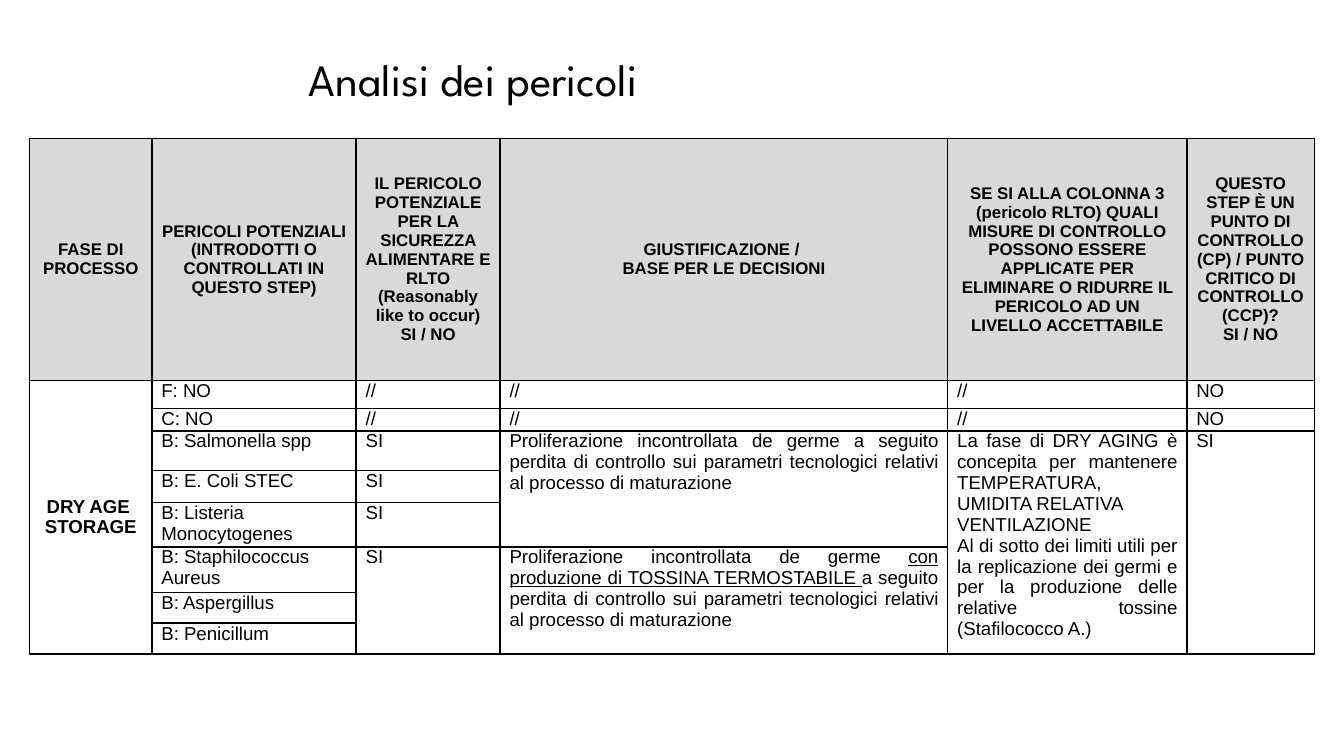
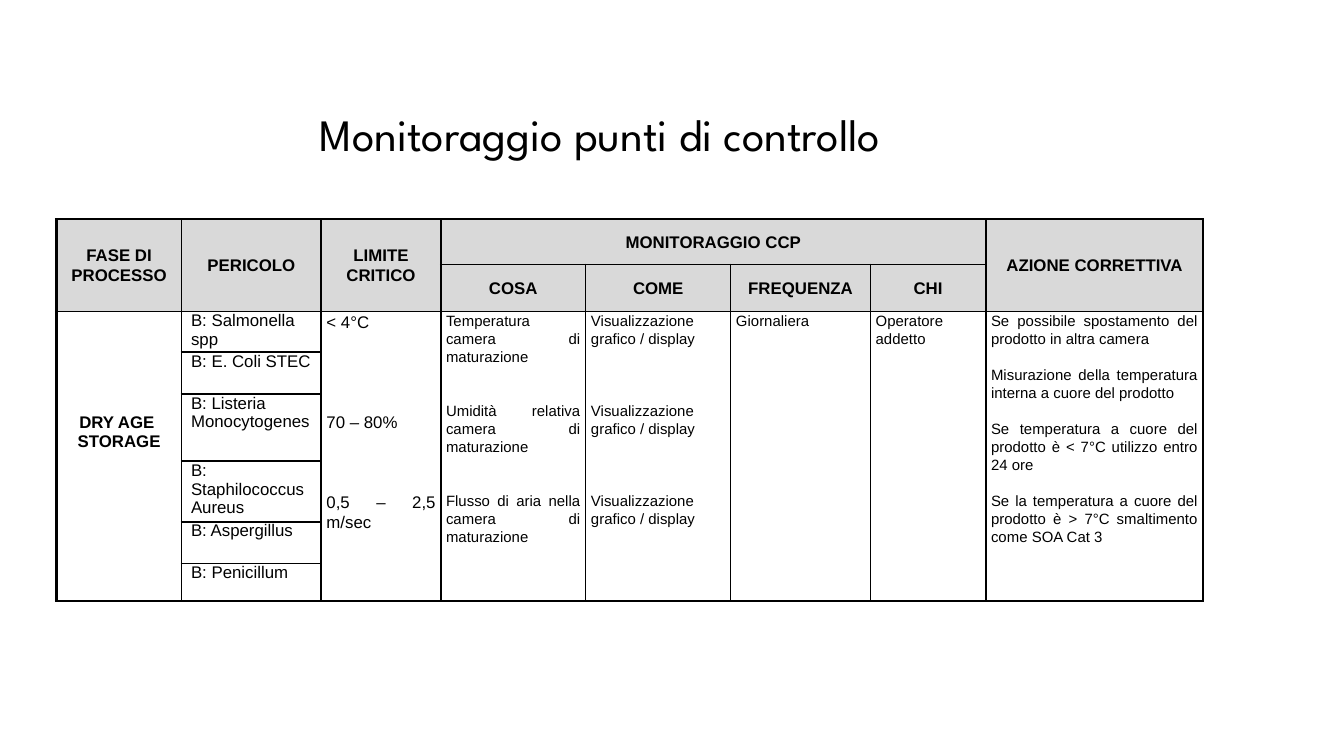
import pptx
import pptx.util
import pptx.dml.color
import pptx.enum.text
from lxml import etree
from pptx.util import Cm, Pt

COLOURS = {"ink": "000000", "header": "D9D9D9"}
BODY_FONT = "Arial"
TITLE_FONT = "League Spartan"
ALIGN = pptx.enum.text.PP_ALIGN
MIDDLE = pptx.enum.text.MSO_ANCHOR.MIDDLE
TOP = pptx.enum.text.MSO_ANCHOR.TOP
DRAWING = "http://schemas.openxmlformats.org/drawingml/2006/main"

HAZARDS = [
    "B: Salmonella spp",
    "B: E. Coli STEC",
    "B: Listeria Monocytogenes",
    "B: Staphilococcus Aureus",
    "B: Aspergillus",
    "B: Penicillum",
]
STAGE = ["DRY AGE ", "STORAGE"]


def colour(name):
    return pptx.dml.color.RGBColor.from_string(COLOURS[name])


class SlideWriter:
    def __init__(self, deck):
        self.deck = deck
        self.page = None
        self.grid = None

    def add_page(self):
        self.page = self.deck.slides.add_slide(self.deck.slide_layouts[6])

    def style(self, para, size, font=BODY_FONT, bold=False):
        para.font.name = font
        para.font.size = Pt(size)
        para.font.bold = bold
        para.font.color.rgb = colour("ink")

    def title(self, text, left, top):
        box = self.page.shapes.add_textbox(Cm(left), Cm(top), Cm(11.66), Cm(2))
        frame = box.text_frame
        frame.word_wrap = True
        frame.vertical_anchor = MIDDLE
        for side in ("left", "top", "right", "bottom"):
            setattr(frame, f"margin_{side}", Cm(0.25))
        frame.text = text
        self.style(frame.paragraphs[0], 24, TITLE_FONT)

    def table(self, left, top, widths, heights, left_edge=1):
        shape = self.page.shapes.add_table(
            len(heights), len(widths), Cm(left), Cm(top),
            Cm(sum(widths)), Cm(sum(heights)))
        self.grid = shape.table
        self.grid.first_row = False
        self.grid.horz_banding = False
        for column, width in zip(self.grid.columns, widths):
            column.width = Cm(width)
        for row, height in zip(self.grid.rows, heights):
            row.height = Cm(height)
            for index, cell in enumerate(row.cells):
                self.borders(cell, left_edge if index == 0 else 1)
                cell.fill.background()
                self.style(cell.text_frame.paragraphs[0], 8)

    def borders(self, cell, left_edge):
        properties = cell._tc.get_or_add_tcPr()
        for side, width in (("L", left_edge), ("R", 1), ("T", 1), ("B", 1)):
            line = etree.SubElement(
                properties, f"{{{DRAWING}}}ln{side}", w=str(int(Pt(width))))
            fill = etree.SubElement(line, f"{{{DRAWING}}}solidFill")
            etree.SubElement(fill, f"{{{DRAWING}}}srgbClr", val=COLOURS["ink"])

    def cell(self, row, column, paras, size, align=ALIGN.JUSTIFY, bold=False,
             anchor=TOP, rows=1, columns=1, inset=0.18, pad_top=0,
             gaps=(), spacing=None):
        cell = self.grid.cell(row, column)
        if rows * columns > 1:
            cell.merge(self.grid.cell(row + rows - 1, column + columns - 1))
        cell.margin_left = cell.margin_right = Cm(inset)
        cell.margin_top, cell.margin_bottom = Cm(pad_top), Cm(0)
        cell.vertical_anchor = anchor
        frame = cell.text_frame
        for index, content in enumerate(paras):
            para = frame.add_paragraph() if index else frame.paragraphs[0]
            self.style(para, size, bold=bold)
            para.alignment = align
            if spacing:
                para.line_spacing = spacing
            if index and gaps:
                para.space_before = Pt(gaps[index - 1])
            spans = [content] if isinstance(content, str) else content
            for position, text in enumerate(spans):
                span = para.add_run()
                span.text = text
                if position % 2:
                    span.font.underline = True
        return cell

    def header(self, row, column, paras, **options):
        cell = self.cell(row, column, paras, 9, ALIGN.CENTER, True, MIDDLE, **options)
        cell.fill.solid()
        cell.fill.fore_color.rgb = colour("header")


def hazard_analysis(writer):
    writer.add_page()
    writer.table(0.56, 2.62, [2.31, 3.86, 2.72, 8.46, 4.52, 2.41],
                 [4.57, 0.53, 0.43, 0.74, 0.61, 0.84, 0.86, 0.58, 0.58])
    headers = [
        ["FASE DI PROCESSO"],
        ["PERICOLI POTENZIALI (INTRODOTTI O CONTROLLATI IN QUESTO STEP)"],
        ["IL PERICOLO POTENZIALE PER LA SICUREZZA ALIMENTARE E RLTO "
         "(Reasonably like to occur) SI / NO"],
        ["GIUSTIFICAZIONE / ", "BASE PER LE DECISIONI"],
        ["SE SI ALLA COLONNA 3 (pericolo RLTO) QUALI MISURE DI CONTROLLO POSSONO "
         "ESSERE APPLICATE PER ELIMINARE O RIDURRE IL PERICOLO AD UN LIVELLO ACCETTABILE"],
        ["QUESTO STEP È UN PUNTO DI CONTROLLO (CP) / PUNTO CRITICO DI CONTROLLO (CCP)?",
         "SI / NO"],
    ]
    for column, paras in enumerate(headers):
        writer.header(0, column, paras)
    writer.cell(1, 0, STAGE, 10, ALIGN.CENTER, True, MIDDLE, rows=8)
    for row, hazard in enumerate(["F: NO", "C: NO"] + HAZARDS, start=1):
        writer.cell(row, 1, [hazard], 10, ALIGN.LEFT)
    for row in (1, 2):
        for column, text in enumerate(["//", "//", "//", "NO"], start=2):
            writer.cell(row, column, [text], 10)
    for row, rows in ((3, 1), (4, 1), (5, 1), (6, 3)):
        writer.cell(row, 2, ["SI"], 10, rows=rows)
    growth = "Proliferazione incontrollata de germe "
    cause = ("a seguito perdita di controllo sui parametri tecnologici relativi "
             "al processo di maturazione ")
    writer.cell(3, 3, [growth + cause], 10, rows=3)
    writer.cell(6, 3, [[growth, "con produzione di TOSSINA TERMOSTABILE ", cause]],
                10, rows=3)
    writer.cell(3, 4, [
        "La fase di DRY AGING è concepita per mantenere TEMPERATURA, UMIDITA RELATIVA",
        "VENTILAZIONE ",
        "Al di sotto dei limiti utili per la replicazione dei germi e per la "
        "produzione delle relative tossine (Stafilococco A.)",
    ], 10, rows=6)
    writer.cell(3, 5, ["SI"], 10, rows=6)
    writer.title("Analisi dei pericoli", 5.59, 0.48)


def control_monitoring(writer):
    writer.add_page()
    writer.table(1.07, 4.14, [2.36, 2.64, 2.26, 2.74, 2.74, 2.64, 2.18, 4.11],
                 [0.86, 0.89, 0.66, 0.79, 1.27, 0.99, 0.79, 0.71], left_edge=2.25)
    tight = {"inset": 0.1, "spacing": 1.07}
    tall_headers = {0: "FASE DI PROCESSO", 1: "PERICOLO", 2: "LIMITE CRITICO",
                    7: "AZIONE CORRETTIVA"}
    for column, text in tall_headers.items():
        writer.header(0, column, [text], rows=2, **tight)
    writer.header(0, 3, ["MONITORAGGIO CCP"], columns=4, **tight)
    for column, text in enumerate(["COSA", "COME", "FREQUENZA", "CHI"], start=3):
        writer.header(1, column, [text], **tight)
    writer.cell(2, 0, STAGE, 9, ALIGN.CENTER, True, rows=6, inset=0.1, pad_top=1.92)
    for row, hazard in enumerate(HAZARDS, start=2):
        writer.cell(row, 1, [hazard], 9, ALIGN.LEFT)
    writer.cell(2, 2, ["< 4°C", "70 – 80%", "0,5 – 2,5 m/sec"], 9, rows=6,
                gaps=[43, 32], **tight)
    line = 9.65
    columns = [
        (["Temperatura camera di maturazione",
          "Umidità relativa camera di maturazione",
          "Flusso di aria nella camera di maturazione"], 2),
        (["Visualizzazione grafico / display"] * 3, 3),
        (["Giornaliera"], 0),
        (["Operatore addetto"], 0),
        (["Se possibile spostamento del prodotto in altra camera",
          "Misurazione della temperatura interna a cuore del prodotto",
          "Se temperatura a cuore del prodotto è < 7°C utilizzo entro 24 ore",
          "Se la temperatura a cuore del prodotto è > 7°C smaltimento come SOA Cat 3"], 1),
    ]
    for column, (paras, lines) in enumerate(columns, start=3):
        writer.cell(2, column, paras, 8, rows=6,
                    gaps=[lines * line] * (len(paras) - 1), **tight)
    writer.title("Monitoraggio punti di controllo", 5.79, 1.52)


def main():
    deck = pptx.Presentation()
    deck.slide_width, deck.slide_height = Cm(25.4), Cm(14.29)
    writer = SlideWriter(deck)
    hazard_analysis(writer)
    control_monitoring(writer)
    deck.save("out.pptx")


if __name__ == "__main__":
    main()
